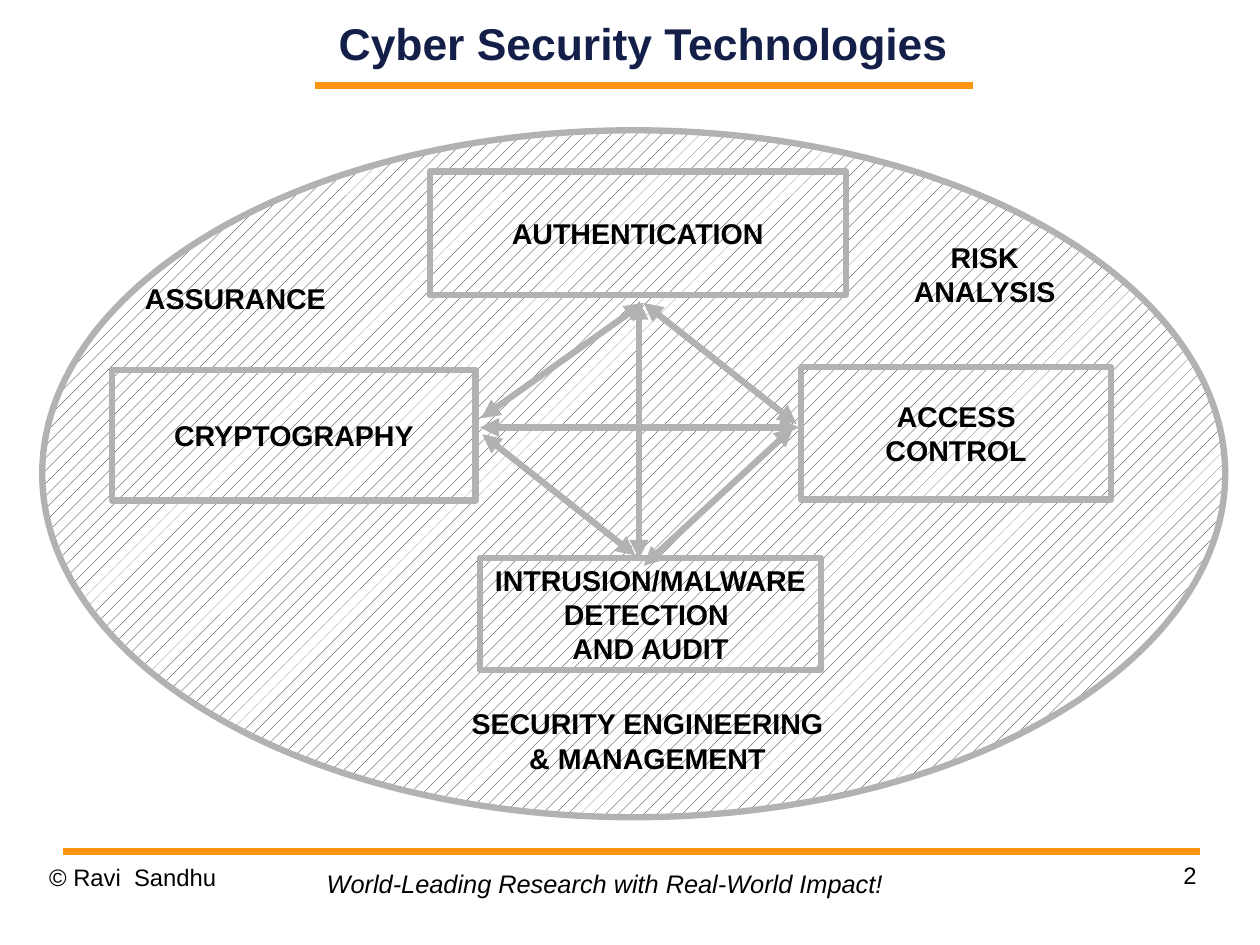
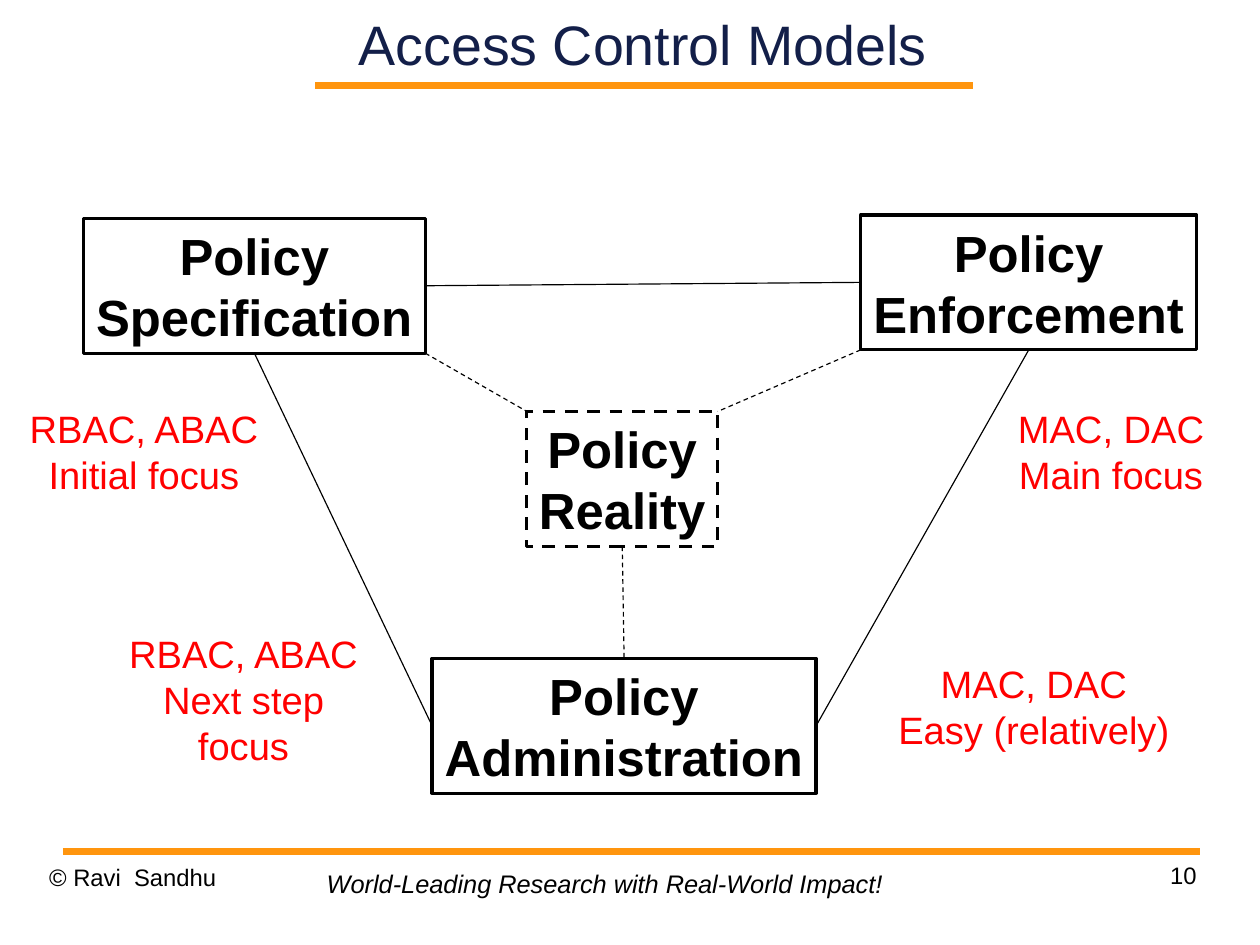
from lxml import etree
from pptx import Presentation
from pptx.dml.color import RGBColor
from pptx.enum.dml import MSO_LINE, MSO_PATTERN
from pptx.enum.shapes import MSO_CONNECTOR, MSO_SHAPE
from pptx.enum.text import MSO_ANCHOR as ANCHOR, MSO_AUTO_SIZE as AUTO, PP_ALIGN as ALIGN
from pptx.oxml.ns import qn
from pptx.util import Pt

NAVY, ORANGE, GREY = "131F49", "FF950E", "B2B2B2"
BLACK, WHITE, RED = "000000", "FFFFFF", "FF0000"
TOP, LEFT, BOTTOM, RIGHT = range(4)  # connection sites of a rectangle


def rgb(value):
    return RGBColor.from_string(value)


def corner(box, x, y):
    """Point on a box, x and y being fractions of its width and height."""
    return box.left.pt + x * box.width.pt, box.top.pt + y * box.height.pt


class Deck:
    FONT = "Arial"
    TITLE_ONLY = 5

    def __init__(self):
        self.prs = Presentation()
        self.prs.slide_width, self.prs.slide_height = Pt(793.7), Pt(595.3)
        self.slide = None

    def start(self, title, number, size, bold=False):
        """New slide with title, orange rules and footer."""
        self.slide = self.prs.slides.add_slide(self.prs.slide_layouts[self.TITLE_ONLY])
        heading = self.slide.shapes.title
        heading.left, heading.top, heading.width, heading.height = map(Pt, (198.5, 0, 413, 54))
        self.set_text(heading, [title], size, NAVY, bold=bold, margins=(0, 0))
        for start, end in (((198.7, 54), (612.7, 54)), ((39.6, 536.4), (756, 536.4))):
            self.line(start, end, ORANGE, 4.31)
        self.text(31, 543.6, 185, 41, ["© Ravi  Sandhu"], 15, align=ALIGN.LEFT, margins=(0, 0))
        self.text(568.8, 542.2, 185, 41, [number], 15, align=ALIGN.RIGHT, margins=(0, 0))
        self.text(198.7, 543.6, 373, 26.6, ["World-Leading Research with Real-World Impact!"],
                  16, align=ALIGN.LEFT, italic=True, wrap=False)

    def set_text(self, shape, lines, size, color=BLACK, bold=False, italic=False,
                 align=ALIGN.CENTER, anchor=ANCHOR.MIDDLE, margins=(7.2, 3.6), wrap=True):
        frame = shape.text_frame
        frame.auto_size, frame.word_wrap = AUTO.NONE, wrap
        frame.vertical_anchor = anchor
        frame.margin_left = frame.margin_right = Pt(margins[0])
        frame.margin_top = frame.margin_bottom = Pt(margins[1])
        for index, words in enumerate(lines):
            para = frame.add_paragraph() if index else frame.paragraphs[0]
            para.alignment = align
            run = para.add_run()
            run.text = words
            run.font.name, run.font.size = self.FONT, Pt(size)
            run.font.bold, run.font.italic = bold, italic
            run.font.color.rgb = rgb(color)

    def text(self, x, y, w, h, lines, size, color=BLACK, **style):
        label = self.slide.shapes.add_textbox(Pt(x), Pt(y), Pt(w), Pt(h))
        self.set_text(label, lines, size, color, anchor=ANCHOR.TOP, **style)

    def shape(self, preset, x, y, w, h, color, weight):
        outline = self.slide.shapes.add_shape(preset, Pt(x), Pt(y), Pt(w), Pt(h))
        outline.shadow.inherit = False
        outline.fill.background()
        outline.line.color.rgb, outline.line.width = rgb(color), Pt(weight)
        return outline

    def box(self, x, y, w, h, lines, size, color, weight, dashed=False):
        box = self.shape(MSO_SHAPE.RECTANGLE, x, y, w, h, color, weight)
        if dashed:
            box.line.dash_style = MSO_LINE.DASH
        self.set_text(box, lines, size, bold=True, wrap=False)
        return box

    def hatched_ellipse(self, x, y, w, h, color, weight):
        fill = self.shape(MSO_SHAPE.OVAL, x, y, w, h, color, weight).fill
        fill.patterned()
        fill.pattern = MSO_PATTERN.PERCENT_10
        fill.fore_color.rgb, fill.back_color.rgb = rgb(BLACK), rgb(WHITE)

    def line(self, start, end, color=BLACK, weight=0.75, dashed=False, arrows=False):
        line = self.slide.shapes.add_connector(MSO_CONNECTOR.STRAIGHT, *map(Pt, start + end))
        line.line.color.rgb, line.line.width = rgb(color), Pt(weight)
        if dashed:
            line.line.dash_style = MSO_LINE.DASH
        properties = line._element.spPr
        if arrows:
            for tip in ("a:headEnd", "a:tailEnd"):
                etree.SubElement(properties.find(qn("a:ln")), qn(tip), type="triangle")
        etree.SubElement(properties, qn("a:effectLst"))
        return line

    def join(self, first, first_site, second, second_site, dashed=False):
        link = self.line((0, 0), (0, 0), dashed=dashed)
        link.begin_connect(first, first_site)
        link.end_connect(second, second_site)


def technologies(deck):
    deck.start("Cyber Security Technologies", "2", 28, bold=True)
    deck.hatched_ellipse(26.6, 82.1, 745.2, 432.7, GREY, 4)

    # Technology boxes
    for place, lines in (
        ((270.7, 108, 262.1, 77.8), ["AUTHENTICATION"]),
        ((302.4, 351.4, 214.6, 70.6), ["INTRUSION/MALWARE", "DETECTION ", "AND AUDIT"]),
        ((70.6, 233.3, 229, 82.1), ["CRYPTOGRAPHY"]),
        ((504.7, 231.1, 195.1, 83.5), ["ACCESS", "CONTROL"]),
    ):
        deck.box(*place, lines, 18, GREY, 4)

    # Two-way arrows between the boxes
    for start, end in (
        ((405.4, 190.8), (303.1, 263.5)),
        ((303.8, 273.6), (400.3, 349.9)),
        ((405.4, 356.4), (499.7, 269.3)),
        ((405.4, 190.8), (501.8, 267.1)),
        ((402.5, 189.4), (402.5, 352.1)),
        ((302.4, 269.3), (503.3, 269.3)),
    ):
        deck.line(start, end, GREY, 4, arrows=True)

    # Surrounding disciplines
    for place, lines in (
        ((82.8, 173.5, 131, 29.5), ["ASSURANCE"]),
        ((567.4, 147.6, 105.8, 51.1), ["RISK", "ANALYSIS"]),
        ((288, 441.4, 239.8, 51.1), ["SECURITY ENGINEERING", "& MANAGEMENT"]),
    ):
        deck.text(*place, lines, 18, bold=True, wrap=False)


def models(deck):
    deck.start("Access Control Models", "10", 35)

    # Policy boxes
    specification, reality, enforcement, administration = (
        deck.box(x, y, w, 85, ["Policy", name], 32, BLACK, 2, dashed=name == "Reality")
        for x, y, w, name in (
            (52.6, 137.5, 215.3, "Specification"),
            (331.9, 259.2, 120.2, "Reality"),
            (542.2, 135.4, 211.7, "Enforcement"),
            (272.2, 414.7, 241.9, "Administration"),
        )
    )

    # Links
    deck.join(specification, BOTTOM, administration, LEFT)
    deck.join(specification, RIGHT, enforcement, LEFT)
    deck.join(enforcement, BOTTOM, administration, RIGHT)
    deck.join(reality, BOTTOM, administration, TOP, dashed=True)
    deck.line(corner(specification, 1, 1), corner(reality, 0, 0), dashed=True)
    deck.line(corner(enforcement, 0, 1), corner(reality, 1, 0), dashed=True)

    # Remarks on each model family
    for place, lines in (
        ((622.8, 252, 154.1, 65.5), ["MAC, DAC", "Main focus"]),
        ((7.9, 252, 165.6, 65.5), ["RBAC, ABAC", "Initial focus"]),
        ((70.6, 393.8, 165.6, 94.3), ["RBAC, ABAC", "Next step focus"]),
        ((548.6, 412.6, 205.2, 65.5), ["MAC, DAC", "Easy (relatively)"]),
    ):
        deck.text(*place, lines, 24, RED)


def main():
    deck = Deck()
    technologies(deck)
    models(deck)
    deck.prs.save("out.pptx")


if __name__ == "__main__":
    main()
